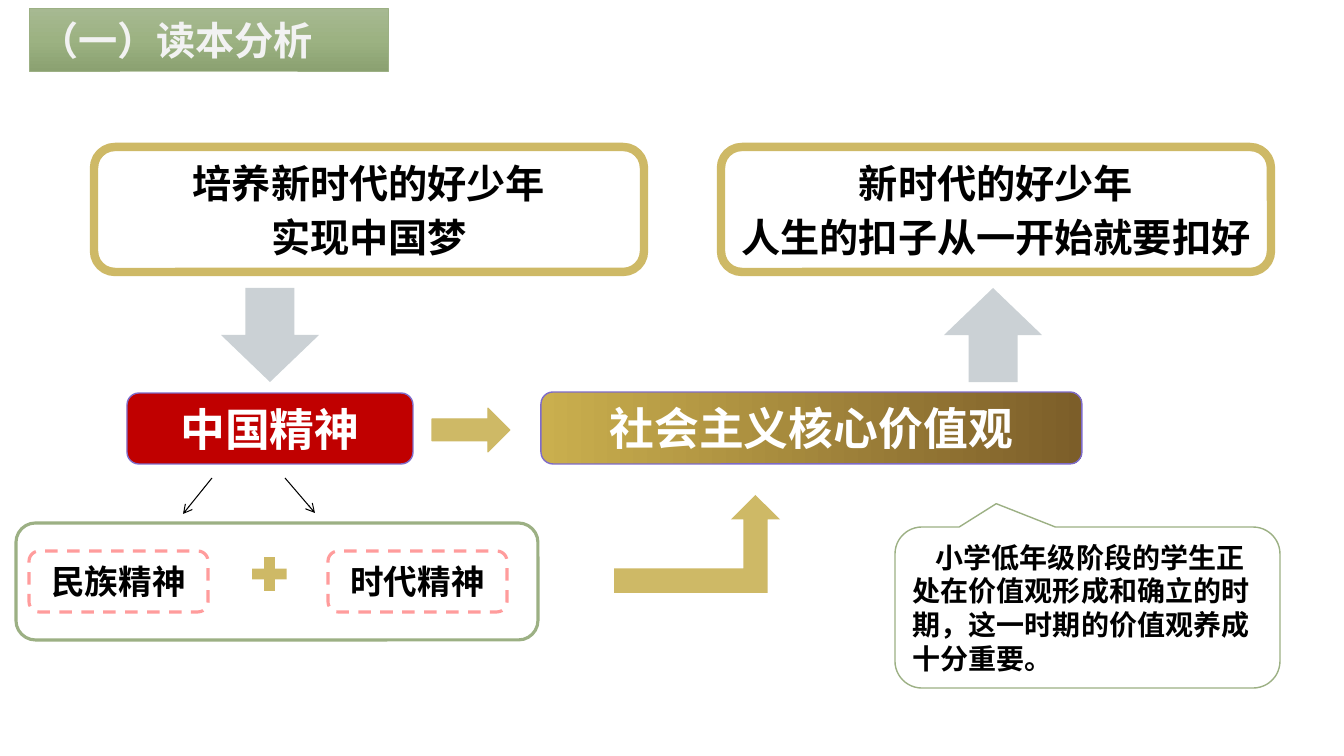
from copy import deepcopy

from lxml import etree
from pptx import Presentation
from pptx.dml.color import RGBColor
from pptx.enum import dml, shapes, text
from pptx.oxml.ns import qn
from pptx.util import Emu, Pt

PX = 914400 / 100.8
CJK = "Noto Sans CJK SC"
KIND = shapes.MSO_SHAPE
COLORS = {
    "white": "FFFFFF", "black": "000000", "heading": "F2F2F2",
    "red": "C00000", "violet": "7E6BC9", "pink": "FF9C9C",
    "gold": "CEB966", "grey": "CBD1D5", "green": "9CB084",
    "green light": "A7B992", "green mid": "9CB282", "green dark": "8BA171",
    "gold light": "CAAF4E", "gold dark": "7C5E29",
}


def px(value):
    return Emu(round(value * PX))


def rgb(name):
    return RGBColor.from_string(COLORS[name])


def paint(shape, fill=None, line=None, width=1, dash=None):
    """Fill with nothing, one colour name or a tuple of gradient colour names."""
    shape.shadow.inherit = False
    if fill is None:
        shape.fill.background()
    elif isinstance(fill, str):
        shape.fill.solid()
        shape.fill.fore_color.rgb = rgb(fill)
    else:
        shape.fill.gradient()
        stop_list = shape._element.spPr.find(".//" + qn("a:gsLst"))
        for _ in fill[2:]:
            stop_list.append(deepcopy(stop_list[-1]))
        for i, (stop, name) in enumerate(zip(shape.fill.gradient_stops, fill)):
            stop.color.rgb = rgb(name)
            stop.position = i / (len(fill) - 1)
    if line is None:
        shape.line.fill.background()
    else:
        shape.line.color.rgb = rgb(line)
        shape.line.width = Pt(width)
        if dash:
            shape.line.dash_style = dash


def write(shape, lines, size, color="black", font=CJK, indent=0,
          align=text.PP_ALIGN.CENTER, before=0, after=0):
    frame = shape.text_frame
    frame.text = "\n".join(lines)
    for name, value in {"word_wrap": True, "auto_size": text.MSO_AUTO_SIZE.NONE,
                        "vertical_anchor": text.MSO_ANCHOR.MIDDLE}.items():
        setattr(frame, name, value)
    for i, paragraph in enumerate(frame.paragraphs):
        paragraph.alignment = align
        paragraph.space_before = Pt(before if i else 0)
        paragraph.space_after = Pt(after)
        if indent:
            paragraph._p.get_or_add_pPr().set("indent", str(px(indent)))
        run = paragraph.runs[0]
        for name, value in {"size": Pt(size), "bold": True, "name": font}.items():
            setattr(run.font, name, value)
        run.font.color.rgb = rgb(color)
        etree.SubElement(run._r.get_or_add_rPr(), qn("a:ea"), typeface=CJK)


def add_block(slide, kind, box, **look):
    shape = slide.shapes.add_shape(kind, *map(px, box))
    paint(shape, **look)
    return shape


def add_heading(slide, words):
    title = slide.shapes.title
    title.left, title.top, title.width, title.height = map(px, (29, 8, 359, 63))
    outline = etree.SubElement(title._element.spPr, qn("a:prstGeom"), prst="roundRect")
    etree.SubElement(outline, qn("a:avLst"))
    paint(title, fill=("green light", "green mid", "green dark"),
          line="green", width=0.5)
    title.fill.gradient_angle = 270
    write(title, [words], 28, "heading", align=text.PP_ALIGN.LEFT)


def add_goal(slide, left, lines):
    goal = add_block(slide, KIND.ROUNDED_RECTANGLE, (left, 147, 550, 125),
                     fill="white", line="gold", width=6)
    write(goal, lines, 28, before=1, after=4)


def add_core(slide, box, words, fill):
    core = add_block(slide, KIND.ROUNDED_RECTANGLE, box, fill=fill, line="violet")
    if not isinstance(fill, str):
        core.fill.gradient_angle = 0
    write(core, [words], 32, "white")


def add_spirit(slide, left, words):
    spirit = add_block(slide, KIND.ROUNDED_RECTANGLE, (left, 551, 179, 61),
                       line="pink", width=2.25, dash=dml.MSO_LINE.DASH)
    write(spirit, [words], 24, font="Arial")


def add_thin_arrow(slide, *ends):
    arrow = slide.shapes.add_connector(shapes.MSO_CONNECTOR.STRAIGHT, *map(px, ends))
    arrow.line.color.rgb = rgb("black")
    arrow.line.width = Pt(0.75)
    etree.SubElement(arrow.line._get_or_add_ln(), qn("a:tailEnd"), type="arrow")
    etree.SubElement(arrow._element.spPr, qn("a:effectLst"))


def add_callout(slide, words):
    callout = add_block(slide, KIND.ROUNDED_RECTANGULAR_CALLOUT, (895, 527, 385, 161),
                        fill="white", line="green")
    for i, value in enumerate((-0.237, -0.645, 0.167)):
        callout.adjustments[i] = value
    write(callout, [words], 20, indent=23, align=text.PP_ALIGN.LEFT)


def main():
    deck = Presentation()
    deck.slide_width, deck.slide_height = px(1344), px(756)
    slide = deck.slides.add_slide(deck.slide_layouts[5])

    add_heading(slide, "（一）读本分析")
    add_goal(slide, 94, ["培养新时代的好少年", "实现中国梦"])
    add_goal(slide, 721, ["新时代的好少年", "人生的扣子从一开始就要扣好"])
    for left, turn in ((221, 0), (944, 180)):
        arrow = add_block(slide, KIND.DOWN_ARROW, (left, 288, 98, 94), fill="grey")
        arrow.rotation = turn

    add_core(slide, (127, 393, 286, 71), "中国精神", "red")
    add_core(slide, (541, 392, 541, 72), "社会主义核心价值观", ("gold light", "gold dark"))
    add_block(slide, KIND.RIGHT_ARROW, (432, 408, 78, 44),
              fill="gold", line="gold", width=0.75)

    add_thin_arrow(slide, 212, 478, 183, 514)
    add_thin_arrow(slide, 285, 478, 315, 513)
    add_block(slide, KIND.ROUNDED_RECTANGLE, (16, 523, 522, 117),
              line="green", width=2.25)
    add_spirit(slide, 29, "民族精神")
    add_spirit(slide, 328, "时代精神")
    add_block(slide, KIND.MATH_PLUS, (246, 551, 47, 46), fill="gold")
    add_block(slide, KIND.BENT_UP_ARROW, (614, 495, 166, 98), fill="gold")
    add_callout(slide, "小学低年级阶段的学生正处在价值观形成和确立的时期，这一时期的价值观养成十分重要。")

    deck.save("out.pptx")


if __name__ == "__main__":
    main()
